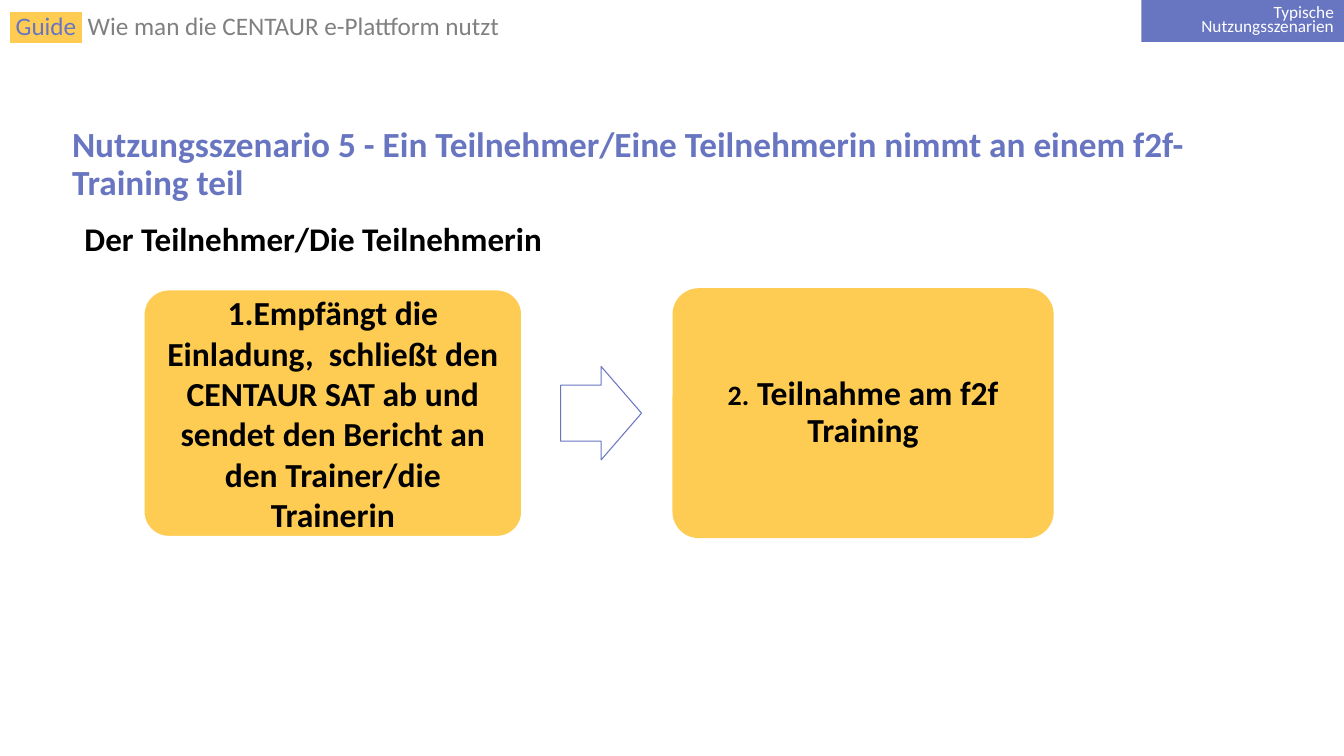
from lxml.etree import SubElement
from pptx import Presentation
from pptx.dml.color import RGBColor
from pptx.enum.shapes import MSO_SHAPE
from pptx.enum.text import MSO_ANCHOR, MSO_AUTO_SIZE, PP_ALIGN
from pptx.oxml.ns import qn
from pptx.util import Pt

PX = 9525
BLUE = RGBColor(0x68, 0x75, 0xC1)
YELLOW = RGBColor(0xFF, 0xCC, 0x53)
GRAY = RGBColor(0x80, 0x80, 0x80)
WHITE = RGBColor(0xFF, 0xFF, 0xFF)
BLACK = RGBColor(0, 0, 0)


def add_run(paragraph, text, size, color, bold=False, highlight=None):
    run = paragraph.add_run()
    run.text = text
    run.font.size = Pt(size)
    run.font.bold = bold
    run.font.color.rgb = color
    if highlight is not None:
        mark = SubElement(run.font._element, qn("a:highlight"))
        SubElement(mark, qn("a:srgbClr"), val=str(highlight))
    run.font.name = "Calibri"


def add_box(preset, left, top, width, height, fill, line, line_width):
    shape = slide.shapes.add_shape(preset, left * PX, top * PX, width * PX, height * PX)
    shape.shadow.inherit = False
    if fill is None:
        shape.fill.background()
    else:
        shape.fill.solid()
        shape.fill.fore_color.rgb = fill
    if line is None:
        shape.line.fill.background()
    else:
        shape.line.color.rgb = line
        shape.line.width = Pt(line_width)
    shape.text_frame.word_wrap = True
    shape.text_frame.vertical_anchor = MSO_ANCHOR.MIDDLE
    return shape


presentation = Presentation()
presentation.slide_width = 1280 * PX
presentation.slide_height = 720 * PX
slide = presentation.slides.add_slide(presentation.slide_layouts[5])

title = slide.shapes.title
title.left, title.top, title.width, title.height = 59 * PX, 113 * PX, 1162 * PX, 89 * PX
title.text_frame.word_wrap = True
title.text_frame.auto_size = MSO_AUTO_SIZE.NONE
title.text_frame.vertical_anchor = MSO_ANCHOR.MIDDLE
paragraph = title.text_frame.paragraphs[0]
paragraph.alignment = PP_ALIGN.LEFT
paragraph.line_spacing = 0.9
add_run(
    paragraph,
    "Nutzungsszenario 5 - Ein Teilnehmer/Eine Teilnehmerin nimmt an einem f2f-Training teil",
    25.2, BLUE, True,
)

guide = slide.shapes.add_textbox(0, 11 * PX, 914 * PX, 34 * PX)
guide.text_frame.word_wrap = True
paragraph = guide.text_frame.paragraphs[0]
paragraph.line_spacing = 0.8
for text, color, highlight in [
    (" ", WHITE, YELLOW),
    ("Guide", BLUE, YELLOW),
    (" ", GRAY, YELLOW),
    (" Wie man die CENTAUR e-Plattform nutzt", GRAY, None),
]:
    add_run(paragraph, text, 18, color, highlight=highlight)

subtitle = slide.shapes.add_textbox(71 * PX, 203 * PX, 642 * PX, 48 * PX)
subtitle.text_frame.word_wrap = True
add_run(subtitle.text_frame.paragraphs[0], "Der Teilnehmer/Die Teilnehmerin", 23.6, BLACK, True)

invitation = (
    "1.Empfängt die Einladung,  schließt den CENTAUR SAT ab "
    "und sendet den Bericht an den Trainer/die Trainerin"
)
steps = [
    (137, WHITE, 1, 10, 1.0, [(invitation, 24)]),
    (642, YELLOW, 2.25, 8, 0.9, [("2.", 20), (" Teilnahme am f2f Training", 24)]),
]
for left, line, line_width, inset, spacing, runs in steps:
    card = add_box(MSO_SHAPE.ROUNDED_RECTANGLE, left, 276, 360, 235, YELLOW, line, line_width)
    card.adjustments[0] = 0.1
    frame = card.text_frame
    frame.margin_left = frame.margin_right = inset * PX
    frame.margin_top = frame.margin_bottom = inset * PX
    paragraph = frame.paragraphs[0]
    paragraph.alignment = PP_ALIGN.CENTER
    paragraph.line_spacing = spacing
    for text, size in runs:
        add_run(paragraph, text, size, BLACK, True)

arrow = add_box(MSO_SHAPE.RIGHT_ARROW, 534, 349, 77, 89, None, BLUE, 0.75)
arrow.adjustments[0] = 0.6
arrow.adjustments[1] = 0.5

tag = add_box(MSO_SHAPE.RECTANGLE, 1087, 0, 193, 40, BLUE, None, 0)
paragraph = tag.text_frame.paragraphs[0]
paragraph.alignment = PP_ALIGN.RIGHT
paragraph.line_spacing = 0.7
add_run(paragraph, "Typische Nutzungsszenarien", 12.3, WHITE)

presentation.save("out.pptx")
